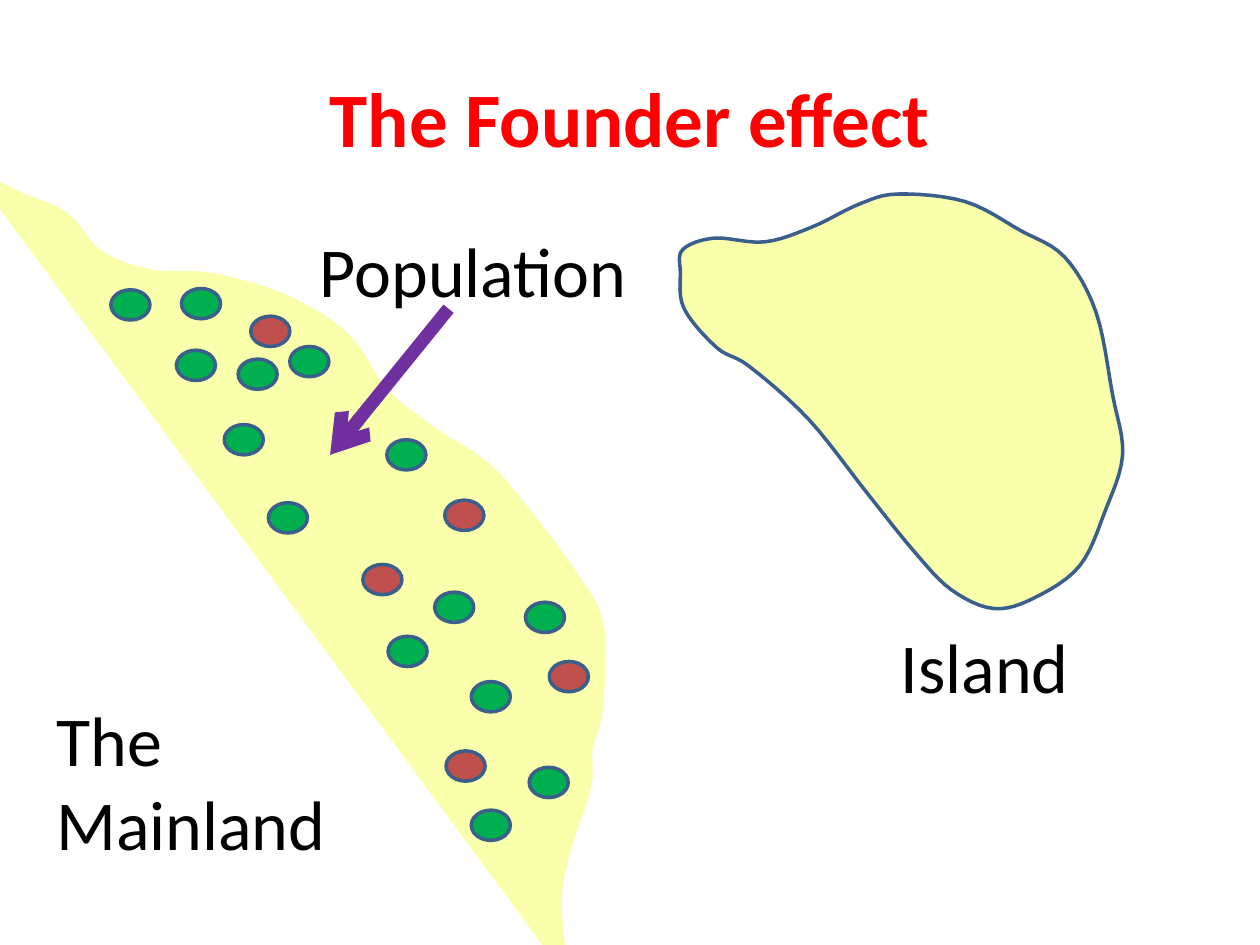
from dataclasses import dataclass

from lxml.etree import SubElement
from pptx import Presentation
from pptx.dml.color import RGBColor
from pptx.enum.shapes import MSO_CONNECTOR, MSO_SHAPE
from pptx.enum.text import MSO_ANCHOR, MSO_AUTO_SIZE, PP_ALIGN
from pptx.oxml.ns import qn
from pptx.util import Inches, Pt


@dataclass(frozen=True)
class Theme:
    font: str = "Calibri"
    title_size: int = 44
    label_size: int = 40
    title: str = "FF0000"
    text: str = "000000"
    land: str = "F9FFAB"
    outline: str = "3A5F8C"
    common: str = "00B050"
    rare: str = "C0504D"
    arrow: str = "7030A0"
    outline_width: float = 2
    shore_width: float = 7.75
    arrow_width: float = 7.5


THEME = Theme()

# Bends of each coast in inches; smooth_coast() draws the curve between them.
MAINLAND_BENDS = [
    (-0.2, 1.39), (0.13, 1.57), (0.5, 1.73), (0.77, 2.03), (1.18, 2.19),
    (1.68, 2.22), (2.28, 2.4), (2.74, 2.7), (3.03, 3.12), (3.41, 3.43),
    (3.86, 3.73), (4.22, 4.15), (4.55, 4.6), (4.74, 4.97), (4.73, 5.63),
    (4.65, 5.94), (4.64, 6.24), (4.49, 6.7), (4.41, 7.07), (4.43, 7.49),
    (4.52, 7.79),
]
ISLAND_BENDS = [
    (5.42, 1.98), (5.67, 1.89), (6.07, 1.92), (6.45, 1.8), (6.82, 1.62),
    (7.13, 1.54), (7.66, 1.6), (8.1, 1.83), (8.45, 2.04), (8.7, 2.48),
    (8.83, 3.13), (8.91, 3.61), (8.77, 4.06), (8.57, 4.49), (8.22, 4.74),
    (7.89, 4.83), (7.55, 4.68), (7.25, 4.37), (6.88, 3.91), (6.42, 3.33),
    (5.95, 2.91), (5.69, 2.76), (5.43, 2.45), (5.4, 2.16),
]
STEPS_PER_BEND = 6

# Left and top of every member of the population, by its colour.
MEMBER_SIZE = (0.31, 0.24)
POPULATION = {
    THEME.common: [
        (0.88, 2.3), (1.44, 2.29), (1.4, 2.78), (1.89, 2.85), (1.78, 3.37),
        (2.3, 2.75), (2.13, 3.99), (3.07, 3.49), (3.74, 5.41), (3.45, 4.7),
        (3.08, 5.05), (4.17, 4.78), (4.2, 6.09), (3.74, 6.43),
    ],
    THEME.rare: [
        (3.53, 3.97), (2.88, 4.48), (4.36, 5.25), (1.99, 2.51), (3.54, 5.96),
    ],
}

LABELS = {
    "The Mainland": (0.35, 5.48, 2.44, 1.45),
    "Island": (7.05, 4.9, 2.44, 0.77),
    "Population": (2.44, 1.76, 2.75, 0.77),
}


def curve_value(before, start, end, after, t):
    """Give a Catmull-Rom value between start (t=0) and end (t=1)."""
    return 0.5 * (
        2 * start
        + (end - before) * t
        + (2 * before - 5 * start + 4 * end - after) * t**2
        + (3 * start - before - 3 * end + after) * t**3
    )


def smooth_coast(bends, closed):
    """Return points on a smooth curve through all bends."""
    if closed:
        guides = [bends[-1], *bends, *bends[:2]]
    else:
        guides = [bends[0], *bends, bends[-1]]
    points = [bends[0]]
    for four_guides in zip(guides, guides[1:], guides[2:], guides[3:]):
        xs, ys = zip(*four_guides)
        for step in range(1, STEPS_PER_BEND + 1):
            t = step / STEPS_PER_BEND
            points.append((curve_value(*xs, t), curve_value(*ys, t)))
    return points


def paint(shape, fill, line, width):
    shape.shadow.inherit = False
    shape.fill.solid()
    shape.fill.fore_color.rgb = RGBColor.from_string(fill)
    shape.line.color.rgb = RGBColor.from_string(line)
    shape.line.width = Pt(width)


def add_land(page, bends, line, width, closed):
    coast = smooth_coast(bends, closed)
    start, *rest = [(Inches(x), Inches(y)) for x, y in coast]
    builder = page.shapes.build_freeform(*start)
    builder.add_line_segments(rest, close=closed)
    paint(builder.convert_to_shape(), THEME.land, line, width)


def add_member(page, place, fill):
    oval = page.shapes.add_shape(MSO_SHAPE.OVAL, *map(Inches, place + MEMBER_SIZE))
    paint(oval, fill, THEME.outline, THEME.outline_width)


def add_text(page, text, area, size, color):
    box = page.shapes.add_textbox(*map(Inches, area))
    frame = box.text_frame
    frame.word_wrap = True
    span = frame.paragraphs[0].add_run()
    span.text = text
    span.font.name = THEME.font
    span.font.size = Pt(size)
    span.font.color.rgb = RGBColor.from_string(color)
    return frame


def add_title(page, text):
    frame = add_text(page, text, (0.5, 0.3, 9, 1.25), THEME.title_size, THEME.title)
    frame.vertical_anchor = MSO_ANCHOR.MIDDLE
    para = frame.paragraphs[0]
    para.alignment = PP_ALIGN.CENTER
    para.runs[0].font.bold = True


def add_label(page, text, area):
    frame = add_text(page, text, area, THEME.label_size, THEME.text)
    frame.auto_size = MSO_AUTO_SIZE.SHAPE_TO_FIT_TEXT


def add_arrow(page, start, end):
    arrow = page.shapes.add_connector(
        MSO_CONNECTOR.STRAIGHT, *map(Inches, start + end)
    )
    arrow.line.color.rgb = RGBColor.from_string(THEME.arrow)
    arrow.line.width = Pt(THEME.arrow_width)
    SubElement(arrow.get_or_add_ln(), qn("a:tailEnd"), type="arrow")
    SubElement(arrow.element.spPr, qn("a:effectLst"))


def main():
    deck = Presentation()
    deck.slide_width, deck.slide_height = Inches(10), Inches(7.5)
    page = deck.slides.add_slide(deck.slide_layouts[6])

    add_title(page, "The Founder effect")
    add_land(page, MAINLAND_BENDS, THEME.land, THEME.shore_width, closed=False)
    add_land(page, ISLAND_BENDS, THEME.outline, THEME.outline_width, closed=True)
    for color, places in POPULATION.items():
        for place in places:
            add_member(page, place, color)
    for text, area in LABELS.items():
        add_label(page, text, area)
    add_arrow(page, start=(3.56, 2.45), end=(2.62, 3.61))

    deck.save("out.pptx")


if __name__ == "__main__":
    main()
